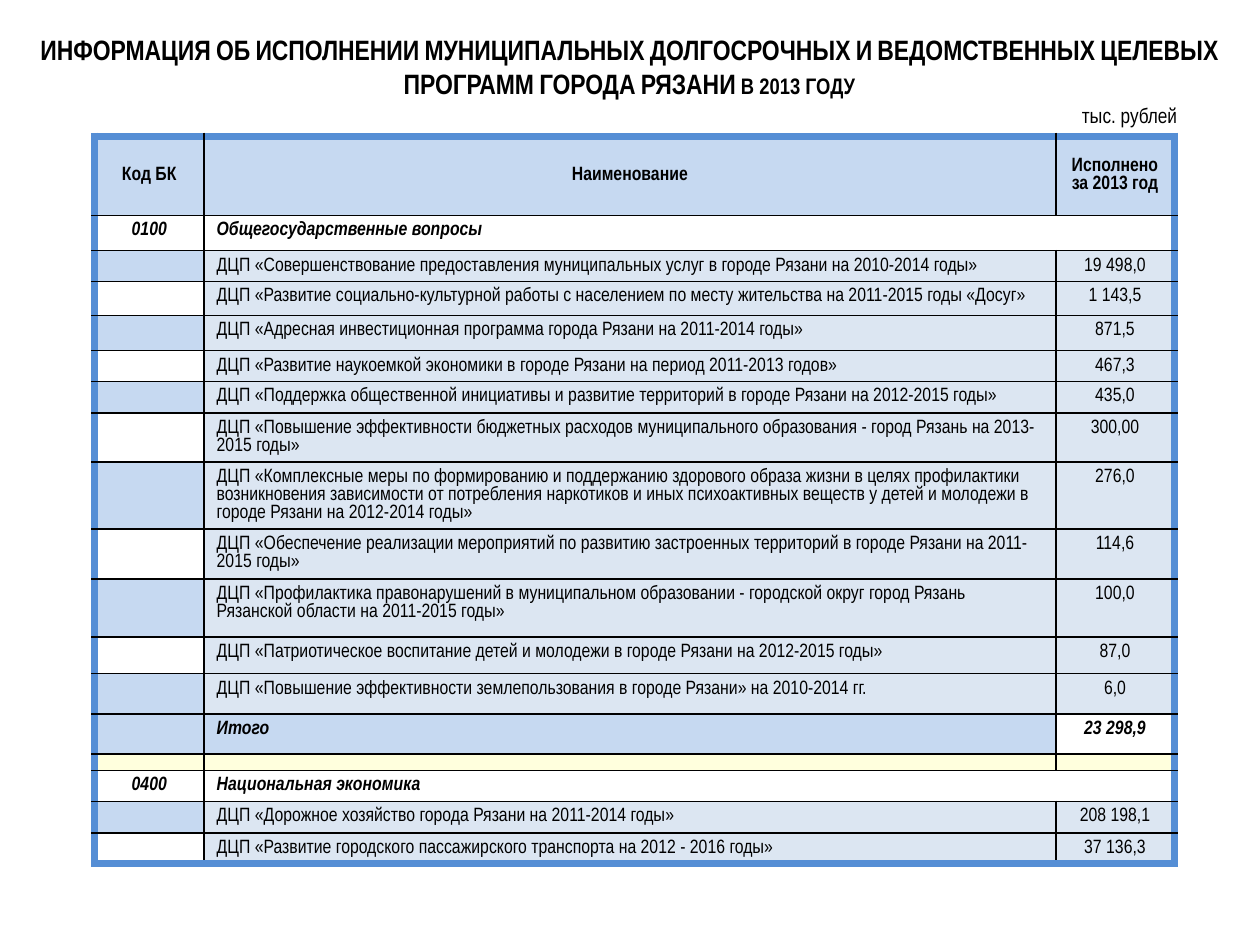
from dataclasses import dataclass
from lxml.etree import SubElement
from pptx import Presentation
from pptx.dml.color import RGBColor
from pptx.enum.text import MSO_ANCHOR, MSO_AUTO_SIZE, PP_ALIGN
from pptx.oxml.ns import qn
from pptx.util import Inches, Pt


@dataclass(frozen=True)
class Theme:
    font: str = "Arial Narrow"
    text: str = "000000"
    frame: str = "558ED5"
    header: str = "C6D9F1"
    program: str = "DCE6F2"
    spacer: str = "FFFFDD"
    plain: str = "FFFFFF"
    title_size: float = 16
    unit_size: float = 12
    table_size: float = 11
    spacer_size: float = 6
    frame_width: float = 4.5
    grid_width: float = 1


TITLE = (
    "ИНФОРМАЦИЯ ОБ ИСПОЛНЕНИИ МУНИЦИПАЛЬНЫХ ДОЛГОСРОЧНЫХ И ВЕДОМСТВЕННЫХ "
    "ЦЕЛЕВЫХ ПРОГРАММ ГОРОДА РЯЗАНИ в 2013 году"
)
COLUMN_WIDTHS = (0.87, 6.76, 0.94)
ROWS = (
    (0.63, "header", "Код БК", "Наименование", "Исполнено\nза 2013 год"),
    (0.28, "section", "0100", "Общегосударственные вопросы", ""),
    (0.24, "program", "", "ДЦП «Совершенствование предоставления муниципальных услуг в городе Рязани на 2010-2014 годы»", "19 498,0"),
    (0.27, "program", "", "ДЦП «Развитие социально-культурной работы с населением по месту жительства на 2011-2015 годы «Досуг»", "1 143,5"),
    (0.28, "program", "", "ДЦП «Адресная инвестиционная программа города Рязани на 2011-2014 годы»", "871,5"),
    (0.24, "program", "", "ДЦП «Развитие наукоемкой экономики в городе Рязани на период 2011-2013 годов»", "467,3"),
    (0.25, "program", "", "ДЦП «Поддержка общественной инициативы и развитие территорий в городе Рязани на 2012-2015 годы»", "435,0"),
    (0.39, "program", "", "ДЦП «Повышение эффективности бюджетных расходов муниципального образования - город Рязань на 2013-2015 годы»", "300,00"),
    (0.53, "program", "", "ДЦП «Комплексные меры по формированию и поддержанию здорового образа жизни в целях профилактики возникновения зависимости от потребления наркотиков и иных психоактивных веществ у детей и молодежи в городе Рязани на 2012-2014 годы»", "276,0"),
    (0.40, "program", "", "ДЦП «Обеспечение реализации мероприятий по развитию застроенных территорий в городе Рязани на 2011-2015 годы»", "114,6"),
    (0.46, "program", "", "ДЦП «Профилактика правонарушений в муниципальном образовании - городской округ город Рязань Рязанской области на 2011-2015 годы»", "100,0"),
    (0.29, "program", "", "ДЦП «Патриотическое воспитание детей и молодежи в городе Рязани на 2012-2015 годы»", "87,0"),
    (0.32, "program", "", "ДЦП «Повышение эффективности землепользования в городе Рязани» на 2010-2014 гг.", "6,0"),
    (0.32, "total", "", "Итого", "23 298,9"),
    (0.13, "spacer", "", "", ""),
    (0.24, "section", "0400", "Национальная экономика", ""),
    (0.25, "program", "", "ДЦП «Дорожное хозяйство города Рязани на 2011-2014 годы»", "208 198,1"),
    (0.24, "program", "", "ДЦП «Развитие городского пассажирского транспорта на 2012 - 2016 годы»", "37 136,3"),
)


class SlideBuilder:
    def __init__(self, slide, theme):
        self.slide = slide
        self.theme = theme

    def format_text(self, text_frame, size, alignment, bold=False, italic=False):
        for paragraph in text_frame.paragraphs:
            paragraph.alignment = alignment
            for run in paragraph.runs:
                run.font.name = self.theme.font
                run.font.size = Pt(size)
                run.font.bold = bold
                run.font.italic = italic
                run.font.color.rgb = RGBColor.from_string(self.theme.text)
            if not paragraph.runs:
                ending = SubElement(paragraph._p, qn("a:endParaRPr"), sz=str(int(size * 100)))
                SubElement(ending, qn("a:latin"), typeface=self.theme.font)

    def place_title(self, text, left, top, width, height):
        title = self.slide.shapes.title
        title.left, title.top = Inches(left), Inches(top)
        title.width, title.height = Inches(width), Inches(height)
        text_frame = title.text_frame
        text_frame.text = text
        text_frame.word_wrap = True
        text_frame.auto_size = MSO_AUTO_SIZE.NONE
        text_frame.vertical_anchor = MSO_ANCHOR.TOP
        self.format_text(text_frame, self.theme.title_size, PP_ALIGN.CENTER, bold=True)
        for run in text_frame.paragraphs[0].runs:
            run.font._element.set("cap", "small")

    def add_label(self, text, left, top, width, height):
        label = self.slide.shapes.add_textbox(Inches(left), Inches(top), Inches(width), Inches(height))
        text_frame = label.text_frame
        text_frame.text = text
        text_frame.word_wrap = True
        text_frame.vertical_anchor = MSO_ANCHOR.MIDDLE
        self.format_text(text_frame, self.theme.unit_size, PP_ALIGN.CENTER)

    def set_borders(self, cell, outer_edges):
        properties = cell._tc.get_or_add_tcPr()
        for edge in "LRTB":
            if edge == "L" and cell.is_spanned:
                continue
            outer = edge in outer_edges
            width = self.theme.frame_width if outer else self.theme.grid_width
            color = self.theme.frame if outer else self.theme.text
            line = SubElement(properties, qn(f"a:ln{edge}"), w=str(Pt(width)))
            fill = SubElement(line, qn("a:solidFill"))
            SubElement(fill, qn("a:srgbClr"), val=color)

    def cell_color(self, kind, row, column):
        theme = self.theme
        if kind == "program" and column == 0:
            return theme.plain if row % 2 else theme.header
        if kind == "total":
            return theme.plain if column == 2 else theme.header
        return {
            "header": theme.header,
            "section": theme.plain,
            "program": theme.program,
            "spacer": theme.spacer,
        }[kind]

    def format_cell(self, cell, kind, column):
        size = self.theme.table_size
        if kind == "header":
            cell.vertical_anchor = MSO_ANCHOR.MIDDLE
        if kind == "spacer":
            size = self.theme.spacer_size
            cell.margin_top = cell.margin_bottom = 0
        centered = column != 1 or kind == "header"
        self.format_text(
            cell.text_frame,
            size,
            PP_ALIGN.CENTER if centered else PP_ALIGN.LEFT,
            bold=kind in ("header", "section", "total"),
            italic=kind in ("section", "total"),
        )

    def add_program_table(self, rows, column_widths, left, top):
        heights = [row[0] for row in rows]
        frame = self.slide.shapes.add_table(
            len(rows), len(column_widths), Inches(left), Inches(top),
            Inches(sum(column_widths)), Inches(sum(heights)),
        )
        table = frame.table
        table.first_row = table.horz_banding = False
        for column, width in zip(table.columns, column_widths):
            column.width = Inches(width)
        last_row, last_column = len(rows) - 1, len(column_widths) - 1
        for row_index, (height, kind, *texts) in enumerate(rows):
            table.rows[row_index].height = Inches(height)
            if kind == "section":
                table.cell(row_index, 1).merge(table.cell(row_index, last_column))
            for column_index, text in enumerate(texts):
                cell = table.cell(row_index, column_index)
                cell.text_frame.text = text
                self.format_cell(cell, kind, column_index)
                sides = {
                    "L": column_index == 0,
                    "R": column_index == last_column or cell.is_merge_origin,
                    "T": row_index == 0,
                    "B": row_index == last_row,
                }
                self.set_borders(cell, [edge for edge, outer in sides.items() if outer])
                cell.fill.solid()
                color = self.cell_color(kind, row_index, column_index)
                cell.fill.fore_color.rgb = RGBColor.from_string(color)


def main():
    presentation = Presentation()
    presentation.slide_width, presentation.slide_height = Inches(10), Inches(7.5)
    slide = presentation.slides.add_slide(presentation.slide_layouts[5])
    builder = SlideBuilder(slide, Theme())
    builder.place_title(TITLE, 0, 0.21, 9.99, 0.79)
    builder.add_program_table(ROWS, COLUMN_WIDTHS, 0.75, 1.08)
    builder.add_label("тыс. рублей", 8.23, 0.76, 1.47, 0.31)
    presentation.save("out.pptx")


if __name__ == "__main__":
    main()
